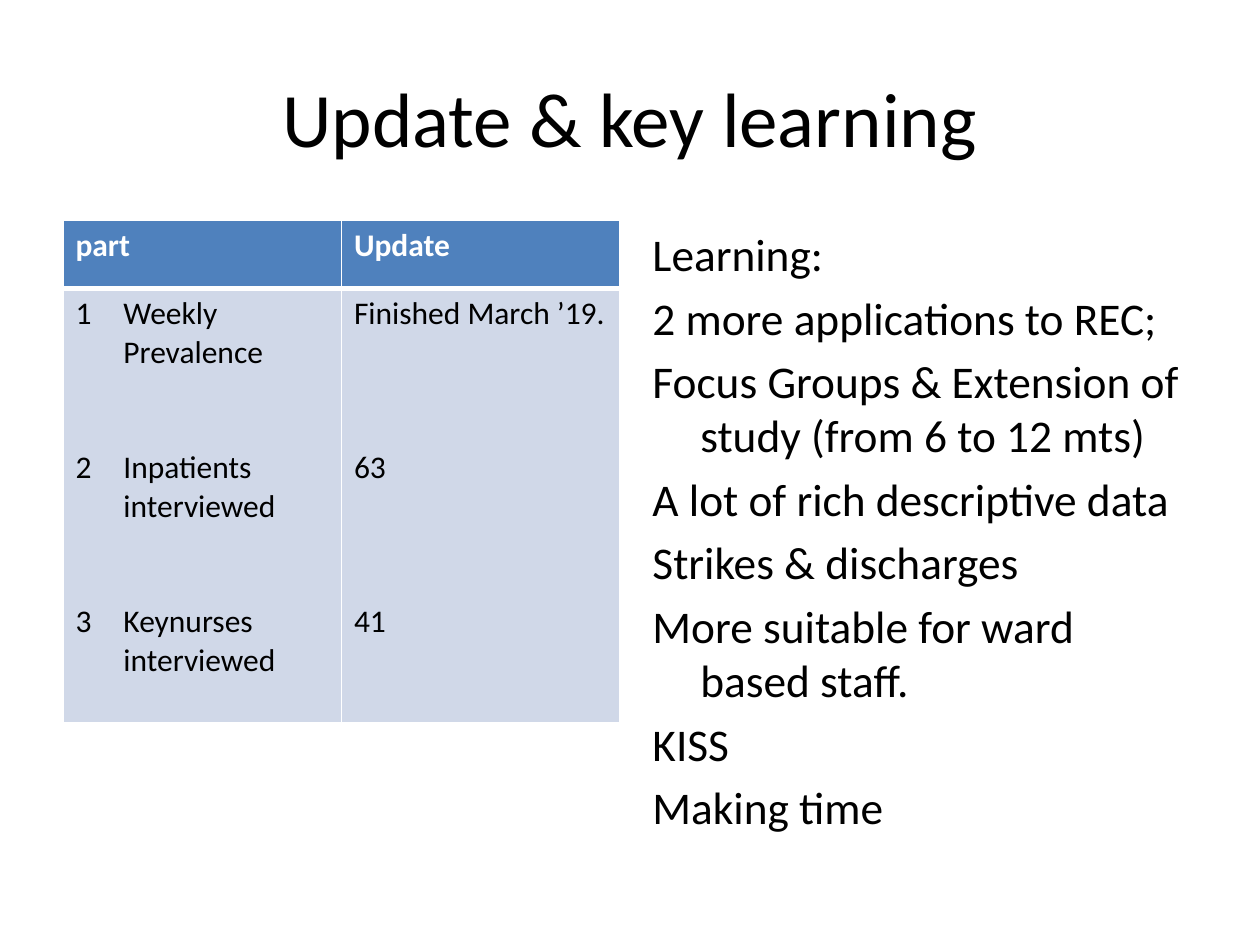
"""Build the "Update & key learning" slide with a progress table and a list of lessons."""
from lxml import etree
from pptx import Presentation
from pptx.dml.color import RGBColor
from pptx.enum.text import MSO_ANCHOR, PP_ALIGN
from pptx.oxml.ns import qn
from pptx.util import Inches, Pt

LEFT, CENTER = PP_ALIGN.LEFT, PP_ALIGN.CENTER
TOP, MIDDLE = MSO_ANCHOR.TOP, MSO_ANCHOR.MIDDLE
COLORS = {"text": "000000", "white": "FFFFFF", "header": "4F81BD", "body": "D0D8E8"}
FONT = "Calibri"
HANGING = 0.38


def write(frame, *texts, size, color="text", bold=False, align=LEFT, anchor=TOP,
          hanging=0, numbered=False, before=0, after=0, line=None):
    frame.word_wrap = True
    frame.vertical_anchor = anchor
    for index, text in enumerate(texts):
        paragraph = frame.paragraphs[0] if index == 0 else frame.add_paragraph()
        paragraph.alignment = align
        paragraph.space_before = Pt(before)
        paragraph.space_after = Pt(after if index < len(texts) - 1 else 0)
        if line:
            paragraph.line_spacing = Pt(line)
        run = paragraph.add_run()
        run.text = text
        run.font.name = FONT
        run.font.size = Pt(size)
        run.font.bold = bold
        run.font.color.rgb = RGBColor.from_string(COLORS[color])
        properties = paragraph._p.get_or_add_pPr()
        properties.set("marL", str(Inches(hanging)))
        properties.set("indent", str(-Inches(hanging)))
        if numbered:
            etree.SubElement(properties, qn("a:buFont"), typeface=FONT)
            etree.SubElement(properties, qn("a:buAutoNum"), type="arabicPlain",
                             startAt=str(index + 1))


def style_cell(cell, fill, borders):
    properties = cell._tc.get_or_add_tcPr()
    for side, width in borders.items():
        border = etree.SubElement(properties, qn(f"a:{side}"), w=str(Pt(width)))
        solid = etree.SubElement(border, qn("a:solidFill"))
        etree.SubElement(solid, qn("a:srgbClr"), val=COLORS["white"])
    cell.fill.solid()
    cell.fill.fore_color.rgb = RGBColor.from_string(COLORS[fill])


presentation = Presentation()
presentation.slide_width = Inches(10)
presentation.slide_height = Inches(7.5)
slide = presentation.slides.add_slide(presentation.slide_layouts[6])

title = slide.shapes.add_textbox(Inches(0.5), Inches(0.3), Inches(9), Inches(1.25))
write(title.text_frame, "Update & key learning", size=44, align=CENTER, anchor=MIDDLE)

row_heights = [0.54, 3.45]
table = slide.shapes.add_table(2, 2, Inches(0.5), Inches(1.75), Inches(4.42),
                               Inches(sum(row_heights))).table
for row, height in zip(table.rows, row_heights):
    row.height = Inches(height)
for column in table.columns:
    column.width = Inches(2.21)

parts = ["Weekly Prevalence", "Inpatients interviewed", "Keynurses interviewed"]
updates = ["Finished March ’19.", "63", "41"]
for column, heading in enumerate(["part", "Update"]):
    header, body = table.cell(0, column), table.cell(1, column)
    write(header.text_frame, heading, size=18, color="white", bold=True)
    style_cell(header, "header", {"lnL": 1, "lnR": 1, "lnT": 1, "lnB": 3})
    style_cell(body, "body", {"lnL": 1, "lnR": 1, "lnT": 3, "lnB": 1})
write(table.cell(1, 0).text_frame, *parts, size=18, hanging=HANGING, numbered=True, after=44)
write(table.cell(1, 1).text_frame, *updates, size=18, after=66)

lessons = [
    "Learning:",
    "2 more applications to REC;",
    "Focus Groups & Extension of study (from 6 to 12 mts)",
    "A lot of rich descriptive data",
    "Strikes & discharges",
    "More suitable for ward based staff.",
    "KISS",
    "Making time",
]
learning = slide.shapes.add_textbox(Inches(5.08), Inches(1.75), Inches(4.42), Inches(4.95))
write(learning.text_frame, *lessons, size=25.9, hanging=HANGING, before=5.4, line=30.9)

presentation.save("out.pptx")
